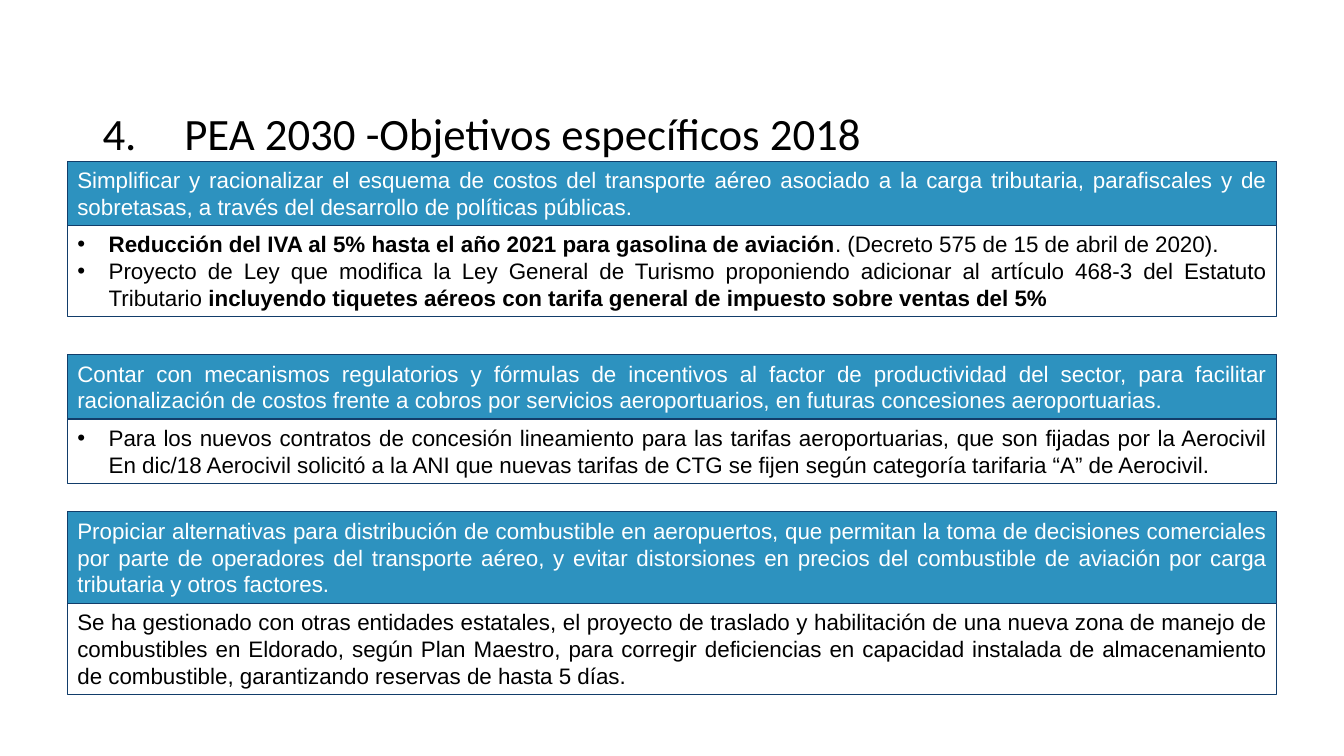
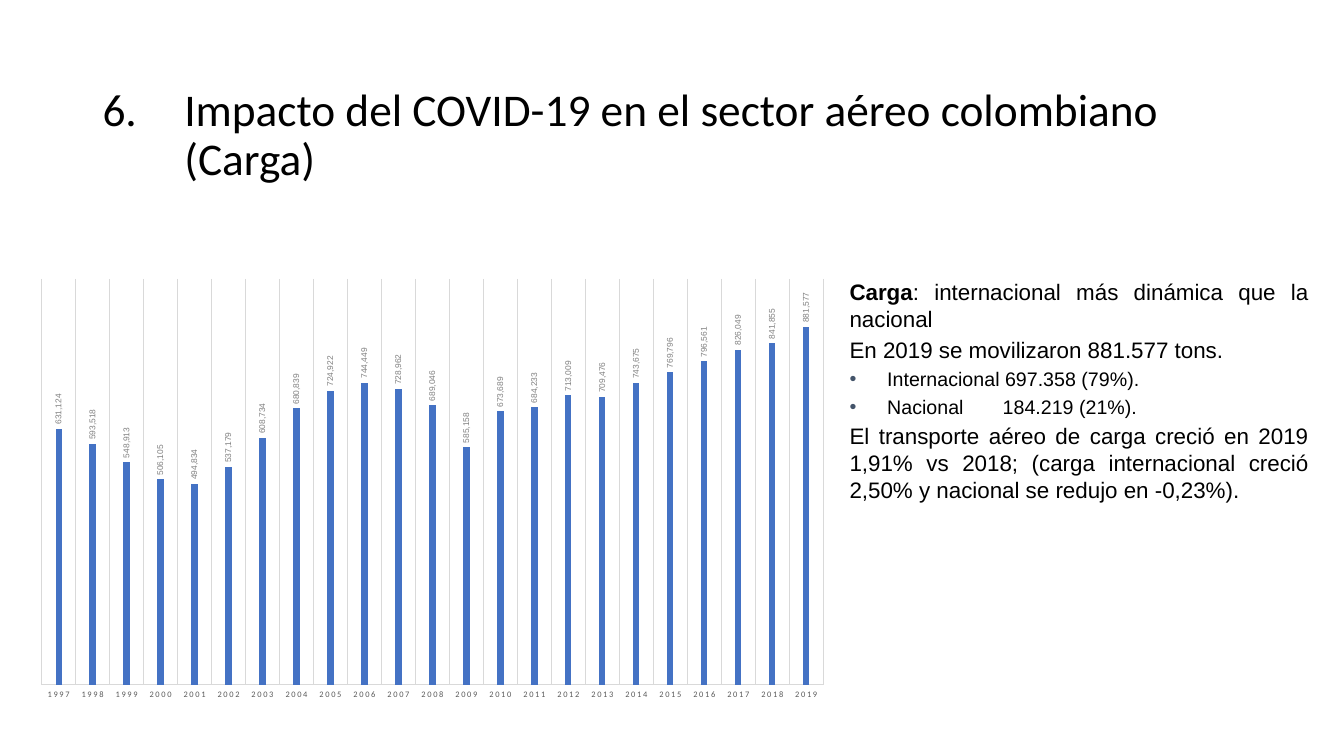
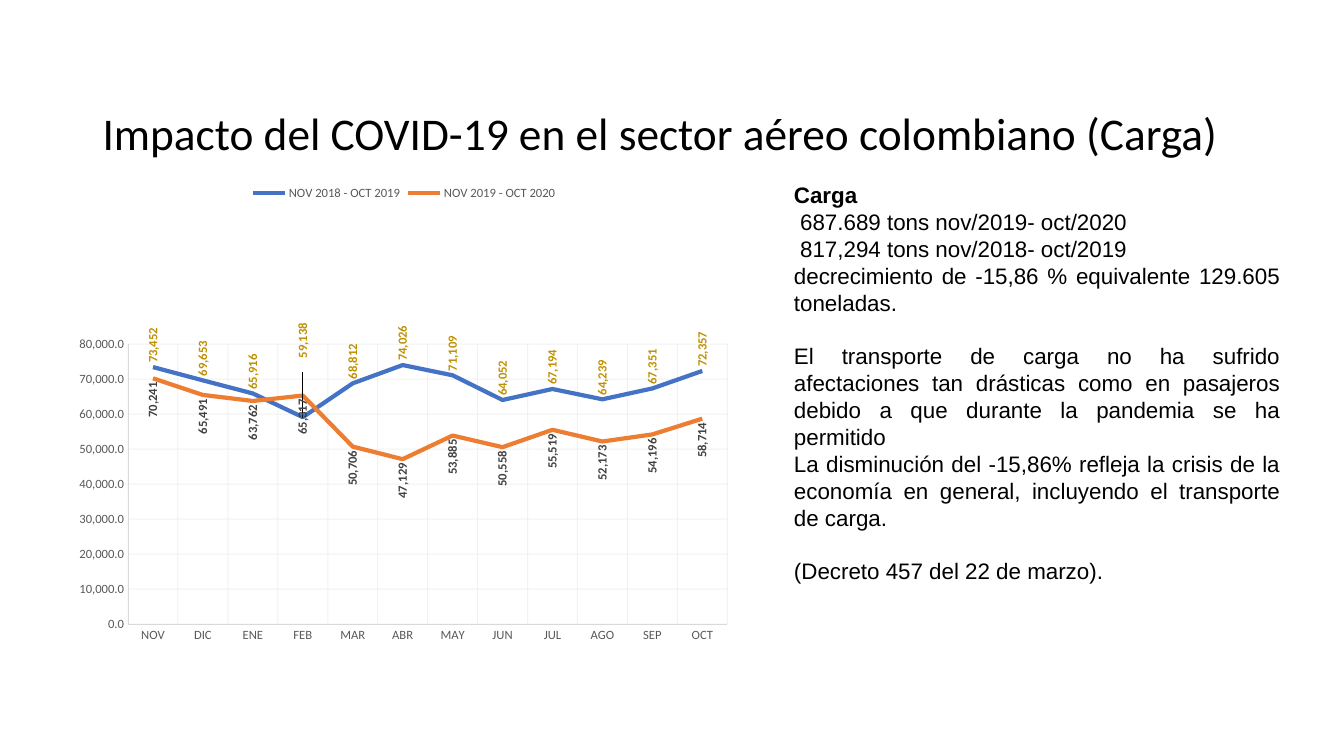
from lxml.etree import SubElement
from pptx import Presentation
from pptx.chart.data import CategoryChartData
from pptx.dml.color import RGBColor
from pptx.enum.chart import XL_CHART_TYPE, XL_LABEL_POSITION, XL_LEGEND_POSITION, XL_TICK_MARK
from pptx.enum.shapes import MSO_SHAPE
from pptx.enum.text import MSO_ANCHOR, MSO_AUTO_SIZE, PP_ALIGN
from pptx.oxml.ns import qn
from pptx.util import Cm, Pt

BLACK = RGBColor(0x00, 0x00, 0x00)
WHITE = RGBColor(0xFF, 0xFF, 0xFF)
HEADER_BLUE = RGBColor(0x2D, 0x92, 0xBF)
BORDER_NAVY = RGBColor(0x12, 0x3D, 0x6A)
BULLET_SLATE = RGBColor(0x44, 0x54, 0x6A)
SERIES_BLUE = RGBColor(0x44, 0x72, 0xC4)
SERIES_ORANGE = RGBColor(0xED, 0x7D, 0x31)
LABEL_GOLD = RGBColor(0xBF, 0x90, 0x00)
LABEL_DARK = RGBColor(0x40, 0x40, 0x40)
LABEL_GREY = RGBColor(0x80, 0x80, 0x80)
AXIS_GREY = RGBColor(0x59, 0x59, 0x59)
GRID_GREY = RGBColor(0xD9, 0xD9, 0xD9)

COVID_TITLE = "Impacto del COVID-19 en el sector aéreo colombiano (Carga)"

OBJECTIVES = [
    {
        "top": 4.06,
        "header": "Simplificar y racionalizar el esquema de costos del transporte aéreo asociado a la carga tributaria, parafiscales y de sobretasas, a través del desarrollo de políticas públicas.",
        "header_lines": 2,
        "body": [
            [("Reducción del IVA al 5% hasta el año 2021 para gasolina de aviación", True),
             (". (Decreto 575 de 15 de abril de 2020).", False)],
            [("Proyecto de Ley que modifica la Ley General de Turismo proponiendo adicionar al artículo 468-3 del Estatuto Tributario ", False),
             ("incluyendo tiquetes aéreos con tarifa general de impuesto sobre ventas del 5%", True)],
        ],
        "body_lines": 3,
        "bullet": "•",
    },
    {
        "top": 8.94,
        "header": "Contar con mecanismos regulatorios y fórmulas de incentivos al factor de productividad del sector, para facilitar racionalización de costos frente a cobros por servicios aeroportuarios, en futuras concesiones aeroportuarias.",
        "header_lines": 2,
        "body": ["Para los nuevos contratos de concesión lineamiento para las tarifas aeroportuarias, que son fijadas por la Aerocivil En dic/18 Aerocivil solicitó a la ANI que nuevas tarifas de CTG se fijen según categoría tarifaria “A” de Aerocivil."],
        "body_lines": 2,
        "bullet": "•",
    },
    {
        "top": 12.9,
        "header": "Propiciar alternativas para distribución de combustible en aeropuertos, que permitan la toma de decisiones comerciales por parte de operadores del transporte aéreo, y evitar distorsiones en precios del combustible de aviación por carga tributaria y otros factores.",
        "header_lines": 3,
        "body": ["Se ha gestionado con otras entidades estatales, el proyecto de traslado y habilitación de una nueva zona de manejo de combustibles en Eldorado, según Plan Maestro, para corregir deficiencias en capacidad instalada de almacenamiento de combustible, garantizando reservas de hasta 5 días."],
        "body_lines": 3,
        "bullet": None,
    },
]

CARGO_BULLET = {"size": 14, "bullet": "•", "bullet_color": BULLET_SLATE,
                "indent": 0.95, "space_before": 3}
CARGO_NOTES = [
    ([("Carga", True), (": internacional más dinámica que la nacional", False)], {}),
    ("En 2019 se movilizaron 881.577 tons.", {"space_before": 3}),
    ("Internacional 697.358 (79%).", CARGO_BULLET),
    ("Nacional\t184.219 (21%).", {**CARGO_BULLET, "tab": 3.86}),
    ("El transporte aéreo de carga creció en 2019 1,91% vs 2018; (carga internacional creció 2,50% y nacional se redujo en -0,23%).", {"space_before": 3}),
]

PANDEMIC_NOTES = [
    ([("Carga", True)], {}),
    (" 687.689 tons nov/2019- oct/2020", {}),
    (" 817,294 tons nov/2018- oct/2019", {}),
    ("decrecimiento de -15,86 % equivalente 129.605 toneladas.", {}),
    ("El transporte de carga no ha sufrido afectaciones tan drásticas como en pasajeros debido a que durante la pandemia se ha permitido", {"space_before": 19}),
    ("La disminución del -15,86% refleja la crisis de la economía en general, incluyendo el transporte de carga.", {}),
    ("(Decreto 457 del 22 de marzo).", {"space_before": 19}),
]

YEARS = [str(year) for year in range(1997, 2020)]
YEARLY_TONS = [
    631124, 593518, 548913, 506105, 494834, 537179, 608734, 680839, 724922, 744449, 728962, 689046,
    585158, 673689, 684233, 713009, 709476, 743675, 769796, 796561, 826049, 841855, 881577,
]

MONTHS = ["NOV", "DIC", "ENE", "FEB", "MAR", "ABR", "MAY", "JUN", "JUL", "AGO", "SEP", "OCT"]
MONTHLY_TONS = {
    "NOV 2018 - OCT 2019": [73452, 69653, 65916, 59138, 68812, 74026, 71109, 64052, 67194, 64239, 67351, 72357],
    "NOV 2019 - OCT 2020": [70241, 65491, 63762, 65317, 50706, 47129, 53885, 50558, 55519, 52173, 54196, 58714],
}
LINE_STYLES = [
    (SERIES_BLUE, LABEL_GOLD, XL_LABEL_POSITION.ABOVE),
    (SERIES_ORANGE, LABEL_DARK, XL_LABEL_POSITION.BELOW),
]


def format_font(font, size, color, name="Calibri", bold=False):
    font.size = Pt(size)
    font.name = name
    font.bold = bold
    font.color.rgb = color


def add_text(frame, text, size=16, font="Arial", color=BLACK, align=PP_ALIGN.JUSTIFY, bullet=None,
             bullet_color=None, start=None, indent=0, tab=None, space_before=0, line_spacing=None):
    paragraph = frame.paragraphs[0]
    if paragraph.runs:
        paragraph = frame.add_paragraph()
    properties = paragraph._p.get_or_add_pPr()
    if bullet or start:
        properties.set("marL", str(Cm(indent)))
        properties.set("indent", str(-Cm(indent)))
    if bullet_color is not None:
        SubElement(SubElement(properties, qn("a:buClr")), qn("a:srgbClr"), val=str(bullet_color))
    if bullet:
        SubElement(properties, qn("a:buFont"), typeface="Arial")
        SubElement(properties, qn("a:buChar"), char=bullet)
    if start:
        SubElement(properties, qn("a:buFont"), typeface="+mj-lt")
        SubElement(properties, qn("a:buAutoNum"), type="arabicPeriod", startAt=str(start))
    if tab:
        SubElement(SubElement(properties, qn("a:tabLst")), qn("a:tab"), pos=str(Cm(tab)), algn="l")
    paragraph.alignment = align
    if space_before:
        paragraph.space_before = Pt(space_before)
    if line_spacing:
        paragraph.line_spacing = line_spacing
    for part, bold in [(text, False)] if isinstance(text, str) else text:
        run = paragraph.add_run()
        run.text = part
        format_font(run.font, size, color, font, bold)


def add_titled_slide(presentation, title, size, start=None):
    slide = presentation.slides.add_slide(presentation.slide_layouts[5])
    shape = slide.shapes.title
    shape.left, shape.top, shape.width, shape.height = Cm(2.33), Cm(2.16), Cm(29.21), Cm(2.54)
    frame = shape.text_frame
    frame.auto_size = MSO_AUTO_SIZE.NONE
    frame.vertical_anchor = MSO_ANCHOR.MIDDLE
    add_text(frame, title, size=size, font="Calibri", align=PP_ALIGN.LEFT, start=start,
             indent=2.06, line_spacing=0.9)
    return slide


def add_box(slide, top, height, paragraphs, fill=None, **text_format):
    shape = slide.shapes.add_shape(MSO_SHAPE.RECTANGLE, Cm(1.7), Cm(top), Cm(30.48), Cm(height))
    shape.shadow.inherit = False
    if fill is None:
        shape.fill.background()
    else:
        shape.fill.solid()
        shape.fill.fore_color.rgb = fill
    shape.line.color.rgb = BORDER_NAVY
    shape.line.width = Pt(0.75)
    frame = shape.text_frame
    frame.word_wrap = True
    frame.vertical_anchor = MSO_ANCHOR.TOP
    for text in paragraphs:
        add_text(frame, text, **text_format)


def add_notes(slide, notes, left, top, width, height):
    frame = slide.shapes.add_textbox(Cm(left), Cm(top), Cm(width), Cm(height)).text_frame
    frame.word_wrap = True
    for text, text_format in notes:
        add_text(frame, text, **text_format)


def add_chart(slide, chart_type, categories, series, area, plot_area):
    data = CategoryChartData(number_format="#,##0")
    data.categories = categories
    for name, values in series.items():
        data.add_series(name, values)
    chart = slide.shapes.add_chart(chart_type, *map(Cm, area), data).chart
    chart.has_title = False
    chart.has_legend = False
    format_font(chart.font, 10, BLACK)
    chart.plots[0].vary_by_categories = False
    plot = chart._chartSpace.chart.plotArea
    for layout in plot.findall(qn("c:layout")):
        plot.remove(layout)
    layout = SubElement(plot, qn("c:layout"))
    plot.insert(0, layout)
    add_manual_layout(layout, layoutTarget="inner", xMode="edge", yMode="edge",
                      **dict(zip("xywh", plot_area)))
    return chart


def add_manual_layout(layout, **values):
    manual = SubElement(layout, qn("c:manualLayout"))
    for name, value in values.items():
        SubElement(manual, qn(f"c:{name}"), val=str(value))


def format_axis(axis, size, line_width):
    axis.major_tick_mark = XL_TICK_MARK.NONE
    axis.minor_tick_mark = XL_TICK_MARK.NONE
    format_font(axis.tick_labels.font, size, AXIS_GREY)
    axis.has_major_gridlines = True
    for line, width in ((axis.format.line, line_width), (axis.major_gridlines.format.line, 0.75)):
        line.color.rgb = GRID_GREY
        line.width = Pt(width)


def set_scale(axis, maximum, unit):
    axis.minimum_scale = 0
    axis.maximum_scale = maximum
    axis.major_unit = unit


def rotate_text(element):
    for body in element.iter(qn("a:bodyPr")):
        body.set("rot", "-5400000")
        body.set("vert", "horz")


def format_labels(series, position, **font_format):
    labels = series.data_labels
    labels.show_value = True
    labels.number_format = "#,##0"
    labels.number_format_is_linked = False
    labels.position = position
    format_font(labels.font, **font_format)
    rotate_text(labels._element)


def build_objectives(presentation):
    slide = add_titled_slide(presentation, "PEA 2030 -Objetivos específicos 2018", 32, start=4)
    for objective in OBJECTIVES:
        header_height, body_height = (0.26 + 0.68 * objective[key] for key in ("header_lines", "body_lines"))
        add_box(slide, objective["top"] + header_height, body_height, objective["body"],
                bullet=objective["bullet"], indent=0.79)
        add_box(slide, objective["top"], header_height, [objective["header"]],
                fill=HEADER_BLUE, color=WHITE)


def build_yearly_cargo(presentation):
    slide = add_titled_slide(presentation, COVID_TITLE, 32.4, start=6)
    add_notes(slide, CARGO_NOTES, 21.16, 6.88, 12.07, 11)
    chart = add_chart(slide, XL_CHART_TYPE.COLUMN_CLUSTERED, YEARS, {"Series 1": YEARLY_TONS},
                      (0.64, 6.81, 20.52, 11), (0.02, 0.02, 0.96, 0.93))
    plot = chart.plots[0]
    plot.gap_width = 444
    plot.overlap = -90
    series = plot.series[0]
    series.format.fill.solid()
    series.format.fill.fore_color.rgb = SERIES_BLUE
    format_labels(series, XL_LABEL_POSITION.OUTSIDE_END, size=6, color=LABEL_GREY, name="Arial")
    format_axis(chart.category_axis, 6, 0.75)
    for properties in chart.category_axis._element.iter(qn("a:defRPr")):
        properties.set("spc", "120")
    set_scale(chart.value_axis, 1000000, 100000)
    chart.value_axis.has_major_gridlines = False
    chart.value_axis.visible = False


def build_monthly_cargo(presentation):
    slide = add_titled_slide(presentation, COVID_TITLE, 32.4)
    add_notes(slide, PANDEMIC_NOTES, 19.76, 4.45, 12.75, 10.52)
    chart = add_chart(slide, XL_CHART_TYPE.LINE, MONTHS, MONTHLY_TONS,
                      (1.7, 4.39, 16.97, 12.6), (0.09, 0.34, 0.89, 0.56))
    for series, (line_color, label_color, position) in zip(chart.plots[0].series, LINE_STYLES):
        series.smooth = False
        series.format.line.color.rgb = line_color
        series.format.line.width = Pt(3)
        format_labels(series, position, size=9, color=label_color, bold=True)
    february = chart.plots[0].series[0].points[3].data_label
    format_font(february.font, 9, LABEL_GOLD, bold=True)
    february.position = XL_LABEL_POSITION.ABOVE
    for label in chart._chartSpace.iter(qn("c:dLbl")):
        rotate_text(label)
        layout = SubElement(label, qn("c:layout"))
        label.insert(1, layout)
        add_manual_layout(layout, x=0, y=-0.11)
    for axis in (chart.category_axis, chart.value_axis):
        format_axis(axis, 9, 0.25)
    for gridlines in chart._chartSpace.iter(qn("c:majorGridlines")):
        for color in gridlines.iter(qn("a:srgbClr")):
            SubElement(color, qn("a:alpha"), val="32000")
    set_scale(chart.value_axis, 80000, 10000)
    chart.value_axis.tick_labels.number_format = "#,##0.0"
    chart.value_axis.tick_labels.number_format_is_linked = False
    chart.has_legend = True
    chart.legend.position = XL_LEGEND_POSITION.TOP
    chart.legend.include_in_layout = False
    format_font(chart.legend.font, 9, AXIS_GREY)


def main():
    presentation = Presentation()
    presentation.slide_width = Cm(33.87)
    presentation.slide_height = Cm(19.05)
    build_objectives(presentation)
    build_yearly_cargo(presentation)
    build_monthly_cargo(presentation)
    presentation.save("out.pptx")


if __name__ == "__main__":
    main()
